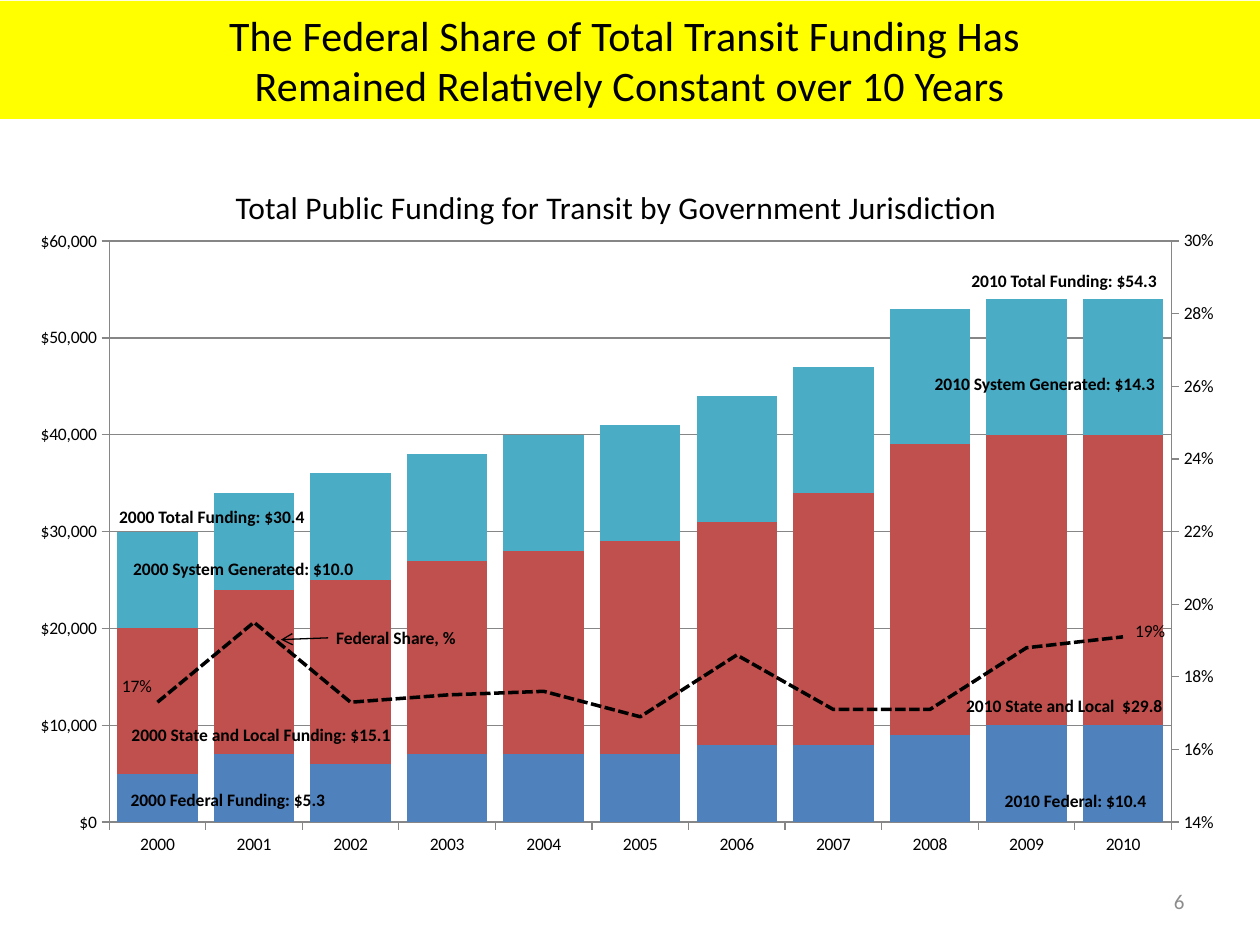
import pptx
import pptx.chart.data
import pptx.dml.color
import pptx.enum.chart
import pptx.enum.dml
import pptx.enum.shapes
import pptx.enum.text
import pptx.oxml
import pptx.oxml.ns
import pptx.util

Pt = pptx.util.Pt
RGBColor = pptx.dml.color.RGBColor
Align = pptx.enum.text.PP_ALIGN
Anchor = pptx.enum.text.MSO_ANCHOR
qn = pptx.oxml.ns.qn

BLACK = RGBColor(0, 0, 0)
GRAY = RGBColor(0x8C, 0x8C, 0x8C)
AXIS_GRAY = RGBColor(0x86, 0x86, 0x86)
YELLOW = RGBColor(0xFF, 0xFF, 0)
BLUE = RGBColor(0x4F, 0x81, 0xBD)
RED = RGBColor(0xC0, 0x50, 0x4D)
TEAL = RGBColor(0x4B, 0xAC, 0xC6)

YEARS = [str(year) for year in range(2000, 2011)]
FUNDING = [
    ("Federal", BLUE, [5000, 7000, 6000, 7000, 7000, 7000, 8000, 8000, 9000, 10000, 10000]),
    ("State and Local", RED,
     [15000, 17000, 19000, 20000, 21000, 22000, 23000, 26000, 30000, 30000, 30000]),
    ("System Generated", TEAL,
     [10000, 10000, 11000, 11000, 12000, 12000, 13000, 13000, 14000, 14000, 14000]),
]
FEDERAL_SHARE = [0.173, 0.195, 0.173, 0.175, 0.176, 0.169, 0.186, 0.171, 0.171, 0.188, 0.191]

CALLOUTS = [
    ("2010 System Generated: $14.3", 527, 209.5, 156),
    ("2010 State and Local  $29.8", 545, 393.5, 143),
    ("2010 Federal: $10.4", 567, 448, 109),
    ("2010 Total Funding: $54.3", 548, 151, 133),
    ("2000 Federal Funding: $5.3", 67.5, 447.5, 148),
    ("2000 State and Local Funding: $15.1", 68, 410, 187),
    ("2000 System Generated: $10.0", 69, 315.5, 187),
    ("2000 Total Funding: $30.4", 61, 285.5, 133),
    ("Federal Share, %", 185, 355, 128),
]
SHARE_LABELS = [("17%", 62.5, 382), ("19%", 641.5, 351)]

PLOT_LAYOUT = """<c:layout %s><c:manualLayout><c:layoutTarget val="inner"/>
<c:xMode val="edge"/><c:yMode val="edge"/><c:x val="0.076"/><c:y val="0.035"/>
<c:w val="0.869"/><c:h val="0.895"/></c:manualLayout></c:layout>"""
LINE_PLOT = """<c:lineChart %s><c:grouping val="standard"/><c:varyColors val="0"/>
<c:marker val="1"/><c:axId val="5001"/><c:axId val="5002"/></c:lineChart>"""
HIDDEN_AXIS = """<c:catAx %s><c:axId val="5001"/>
<c:scaling><c:orientation val="minMax"/></c:scaling><c:delete val="1"/>
<c:axPos val="b"/><c:crossAx val="5002"/><c:crosses val="autoZero"/></c:catAx>"""
SHARE_AXIS = """<c:valAx %s><c:axId val="5002"/>
<c:scaling><c:orientation val="minMax"/><c:max val="0.3"/><c:min val="0.14"/></c:scaling>
<c:delete val="0"/><c:axPos val="r"/><c:numFmt formatCode="0%%" sourceLinked="0"/>
<c:majorTickMark val="out"/><c:minorTickMark val="none"/><c:tickLblPos val="nextTo"/>
<c:spPr><a:ln w="9525"><a:solidFill><a:srgbClr val="868686"/></a:solidFill></a:ln></c:spPr>
<c:crossAx val="5001"/><c:crosses val="max"/><c:crossBetween val="between"/>
<c:majorUnit val="0.02"/></c:valAx>"""


def element(xml):
    """Parse a chart or drawing fragment with its namespaces filled in."""
    return pptx.oxml.parse_xml(xml % pptx.oxml.ns.nsdecls("c", "a"))


class SlideBuilder:
    """Hold the type style and current slide, and add each kind of element."""

    font = "Calibri"

    def __init__(self, slide):
        self.slide = slide

    def style_text(self, frame, size, color=BLACK, bold=False, align=Align.LEFT, spacing=0):
        """Format every run in a text frame."""
        for para in frame.paragraphs:
            para.alignment = align
            for span in para.runs:
                span.font.name = self.font
                span.font.size = Pt(size)
                span.font.bold = bold
                span.font.color.rgb = color
                if spacing:
                    span._r.get_or_add_rPr().set("spc", str(spacing))

    def title(self, text, left, top, width, height):
        """Place the title placeholder as a yellow band."""
        box = self.slide.shapes.title
        box.left, box.top, box.width, box.height = map(Pt, (left, top, width, height))
        box.fill.solid()
        box.fill.fore_color.rgb = YELLOW
        frame = box.text_frame
        frame.text = text
        frame.auto_size = pptx.enum.text.MSO_AUTO_SIZE.NONE
        frame.vertical_anchor = Anchor.MIDDLE
        self.style_text(frame, 24, align=Align.CENTER, spacing=10)

    def text(self, text, left, top, width, height, size=10, wrap=True, anchor=Anchor.TOP, **style):
        """Add a text box."""
        box = self.slide.shapes.add_textbox(*map(Pt, (left, top, width, height)))
        frame = box.text_frame
        frame.text = text
        frame.word_wrap = wrap
        frame.vertical_anchor = anchor
        self.style_text(frame, size, **style)

    def arrow(self, start, end):
        """Add a thin black line with an open arrowhead at its end."""
        line = self.slide.shapes.add_connector(
            pptx.enum.shapes.MSO_CONNECTOR.STRAIGHT, *map(Pt, start + end))
        line.line.color.rgb = BLACK
        line.line.width = Pt(0.75)
        line.line._get_or_add_ln().append(element('<a:tailEnd %s type="arrow"/>'))
        line._element.spPr.append(element("<a:effectLst %s/>"))

    def funding_chart(self, left, top, width, height):
        """Add stacked funding columns with the federal share on a second axis."""
        data = pptx.chart.data.CategoryChartData()
        data.categories = YEARS
        for name, _, values in FUNDING:
            data.add_series(name, values, "#,##0")
        data.add_series("Federal Share", FEDERAL_SHARE, "0.0%")
        chart = self.slide.shapes.add_chart(
            pptx.enum.chart.XL_CHART_TYPE.COLUMN_STACKED,
            *map(Pt, (left, top, width, height)), data).chart
        chart.has_legend = False
        chart.has_title = False
        chart.font.name = self.font
        chart.font.size = Pt(10)
        chart.font.color.rgb = BLACK
        plot = chart.plots[0]
        plot.gap_width = 20
        plot.overlap = 100
        plot.vary_by_categories = False
        columns = list(plot.series)
        for series, (_, color, _) in zip(columns, FUNDING):
            series.format.fill.solid()
            series.format.fill.fore_color.rgb = color
        amounts = chart.value_axis
        amounts.minimum_scale, amounts.maximum_scale, amounts.major_unit = 0, 60000, 10000
        amounts.tick_labels.number_format = '"$"#,##0'
        amounts.tick_labels.number_format_is_linked = False
        amounts.has_major_gridlines = True
        for rule in (amounts.format, amounts.major_gridlines.format, chart.category_axis.format):
            rule.line.color.rgb = AXIS_GRAY
            rule.line.width = Pt(0.75)
        for axis in (amounts, chart.category_axis):
            axis.major_tick_mark = pptx.enum.chart.XL_TICK_MARK.OUTSIDE
        self.move_to_second_axis(chart, columns[-1])

    def move_to_second_axis(self, chart, series):
        """Turn one column series into a dashed line on the right axis."""
        series.format.line.color.rgb = BLACK
        series.format.line.width = Pt(2)
        series.format.line.dash_style = pptx.enum.dml.MSO_LINE.SQUARE_DOT
        share = series._element
        for inversion in share.findall(qn("c:invertIfNegative")):
            share.remove(inversion)
        share.find(qn("c:spPr")).addnext(
            element('<c:marker %s><c:symbol val="none"/></c:marker>'))
        share.append(element('<c:smooth %s val="0"/>'))
        area = chart._chartSpace.chart.plotArea
        for layout in area.findall(qn("c:layout")):
            area.remove(layout)
        area.insert(0, element(PLOT_LAYOUT))
        line_plot = element(LINE_PLOT)
        line_plot.find(qn("c:varyColors")).addnext(share)
        area.find(qn("c:barChart")).addnext(line_plot)
        last_axis = area.find(qn("c:valAx"))
        last_axis.addnext(element(SHARE_AXIS))
        last_axis.addnext(element(HIDDEN_AXIS))


def main():
    """Build the transit funding slide."""
    deck = pptx.Presentation()
    deck.slide_width, deck.slide_height = Pt(720), Pt(540)
    page = SlideBuilder(deck.slides.add_slide(deck.slide_layouts[5]))
    page.title("The Federal Share of Total Transit Funding Has \n"
               "Remained Relatively Constant over 10 Years", 0, 0.5, 720, 67.5)
    page.funding_chart(9.3, 124.8, 698.5, 371)
    page.text("Total Public Funding for Transit by Government Jurisdiction",
              -6, 104, 716.5, 45, size=18, align=Align.CENTER, spacing=10)
    for text, left, top, width in CALLOUTS:
        page.text(text, left, top, width, 19.5, bold=True)
    for text, left, top in SHARE_LABELS:
        page.text(text, left, top, 32, 32, wrap=False)
    page.arrow((187.5, 364.5), (160.5, 365.5))
    page.text("6", 516, 500.5, 168, 29, size=12, color=GRAY,
              align=Align.RIGHT, anchor=Anchor.MIDDLE)
    deck.save("out.pptx")


if __name__ == "__main__":
    main()
